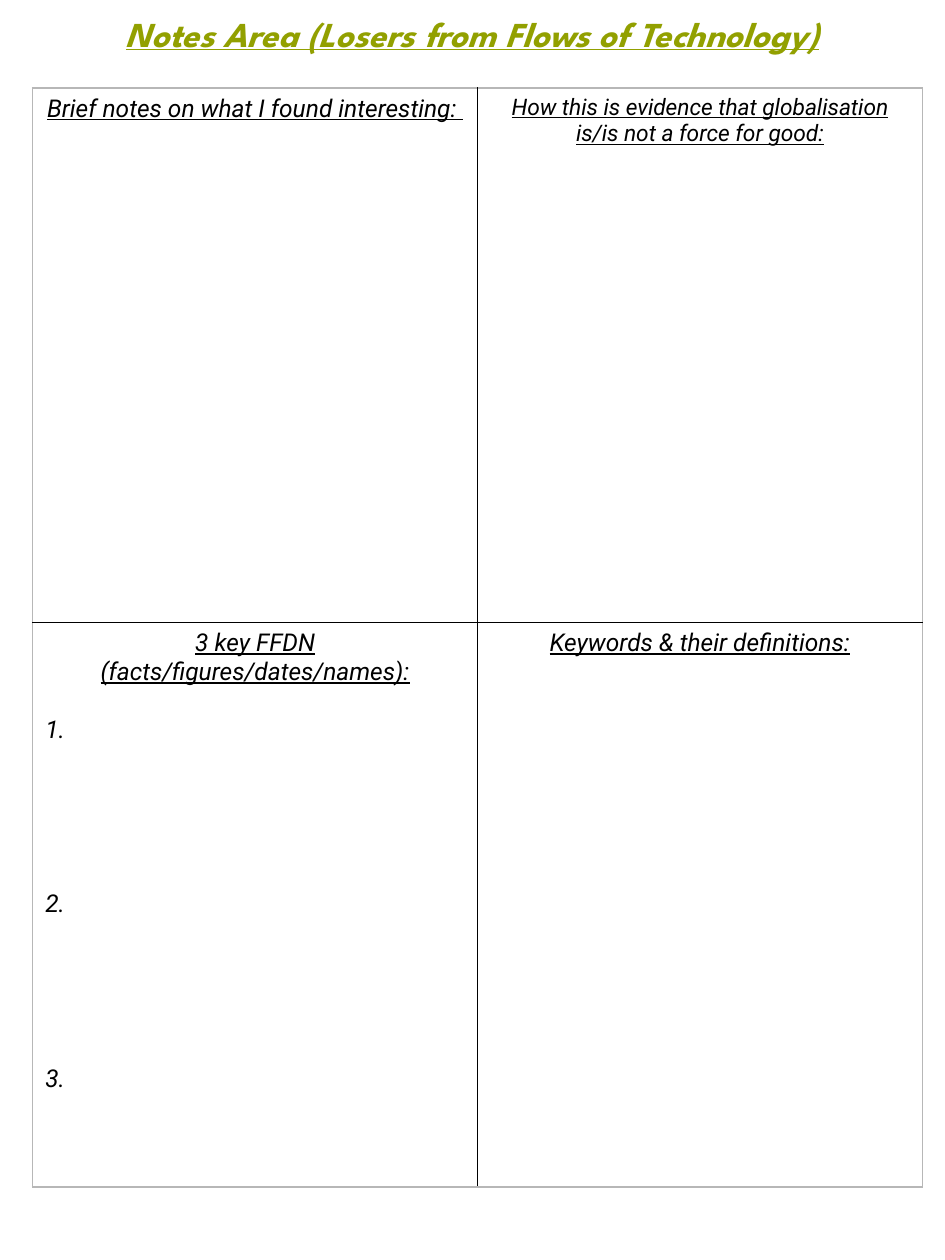
"""Builds a one-page note-taking sheet with a title and a two-by-two grid."""
import pptx
import pptx.dml.color
import pptx.enum.text
import pptx.oxml.ns
import pptx.util
from lxml import etree

Inches = pptx.util.Inches
Pt = pptx.util.Pt
RGBColor = pptx.dml.color.RGBColor
ALIGN = pptx.enum.text.PP_ALIGN

BLACK = RGBColor(0x00, 0x00, 0x00)
GREY = RGBColor(0xB7, 0xB7, 0xB7)
OLIVE = RGBColor(0x92, 0xA0, 0x00)

LINE_HEIGHT = 16.6
HEADINGS = [
    [("Brief notes on what I found interesting: ", 14),
     ("How this is evidence that globalisation is/is not a force for good:", 13)],
    [("3 key FFDN (facts/figures/dates/names):", 14),
     ("Keywords & their definitions:", 14)],
]
FACT_NUMBERS = [("1.", 1), ("2.", 5), ("3.", 5)]


class NotesSheet:
    def __init__(self, page, font="Roboto", title_font="League Spartan"):
        self.page = page
        self.font = font
        self.title_font = title_font

    def style(self, para, size, font, color, bold=False, underline=True):
        for span in para.runs:
            span.font.name = font
            span.font.size = Pt(size)
            span.font.color.rgb = color
            span.font.bold = bold
            span.font.italic = True
            span.font.underline = underline

    def title(self, text, left, top, width, height):
        box = self.page.shapes.add_textbox(Inches(left), Inches(top), Inches(width), Inches(height))
        frame = box.text_frame
        frame.word_wrap = True
        frame.margin_left = frame.margin_right = Inches(0.1)
        frame.margin_top = frame.margin_bottom = Inches(0.1)
        frame.text = text
        para = frame.paragraphs[0]
        para.alignment = ALIGN.CENTER
        self.style(para, 20, self.title_font, OLIVE, bold=True)

    def border(self, cell, side, color):
        properties = cell._tc.get_or_add_tcPr()
        line = etree.SubElement(properties, pptx.oxml.ns.qn(f"a:{side}"), w=str(Pt(1)))
        fill = etree.SubElement(line, pptx.oxml.ns.qn("a:solidFill"))
        etree.SubElement(fill, pptx.oxml.ns.qn("a:srgbClr"), val=str(color))

    def grid(self, headings, left, top, widths, heights):
        table = self.page.shapes.add_table(
            len(heights), len(widths), Inches(left), Inches(top),
            Inches(sum(widths)), Inches(sum(heights))).table
        table.first_row = table.horz_banding = False
        for column, width in zip(table.columns, widths):
            column.width = Inches(width)
        for row, height in zip(table.rows, heights):
            row.height = Inches(height)
        last_row, last_column = len(heights) - 1, len(widths) - 1
        for r, texts in enumerate(headings):
            for c, (text, size) in enumerate(texts):
                cell = table.cell(r, c)
                outer = {"lnL": c == 0, "lnR": c == last_column,
                         "lnT": r == 0, "lnB": r == last_row}
                for side, is_outer in outer.items():
                    self.border(cell, side, GREY if is_outer else BLACK)
                cell.fill.background()
                cell.text_frame.text = text
                para = cell.text_frame.paragraphs[0]
                para.alignment = ALIGN.CENTER
                self.style(para, size, self.font, BLACK)
        return table

    def numbers(self, cell, entries):
        for text, lines_above in entries:
            para = cell.text_frame.add_paragraph()
            para.text = text
            para.alignment = ALIGN.LEFT
            para.space_before = Pt(lines_above * LINE_HEIGHT)
            self.style(para, 14, self.font, BLACK, underline=False)


def main():
    deck = pptx.Presentation()
    deck.slide_width, deck.slide_height = Inches(7.5), Inches(10)
    sheet = NotesSheet(deck.slides.add_slide(deck.slide_layouts[6]))
    table = sheet.grid(HEADINGS, 0.26, 0.7, [3.53, 3.53], [4.24, 4.48])
    sheet.numbers(table.cell(1, 0), FACT_NUMBERS)
    sheet.title("Notes Area (Losers from Flows of Technology)", 0, 0, 7.5, 0.9)
    deck.save("out.pptx")


if __name__ == "__main__":
    main()
